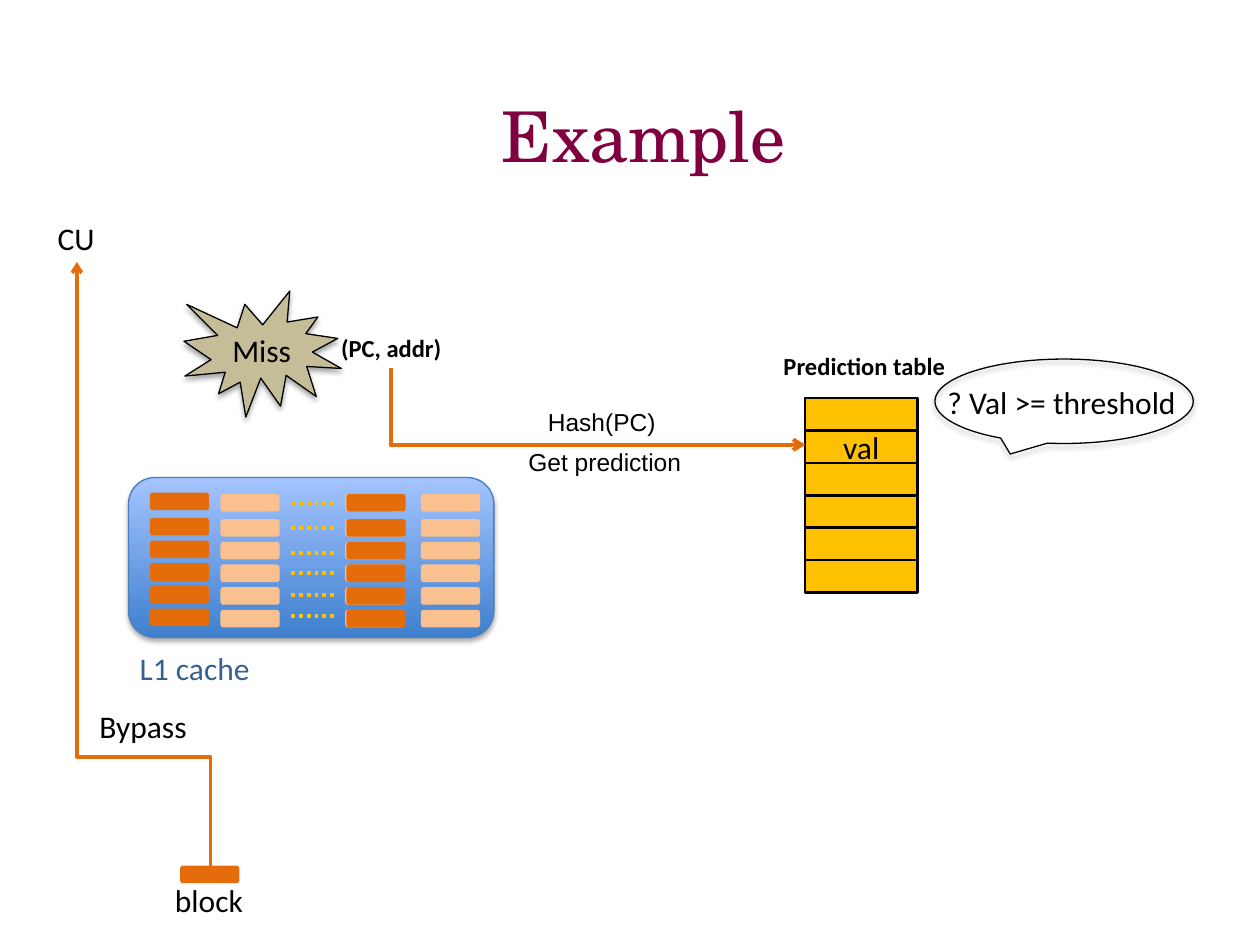
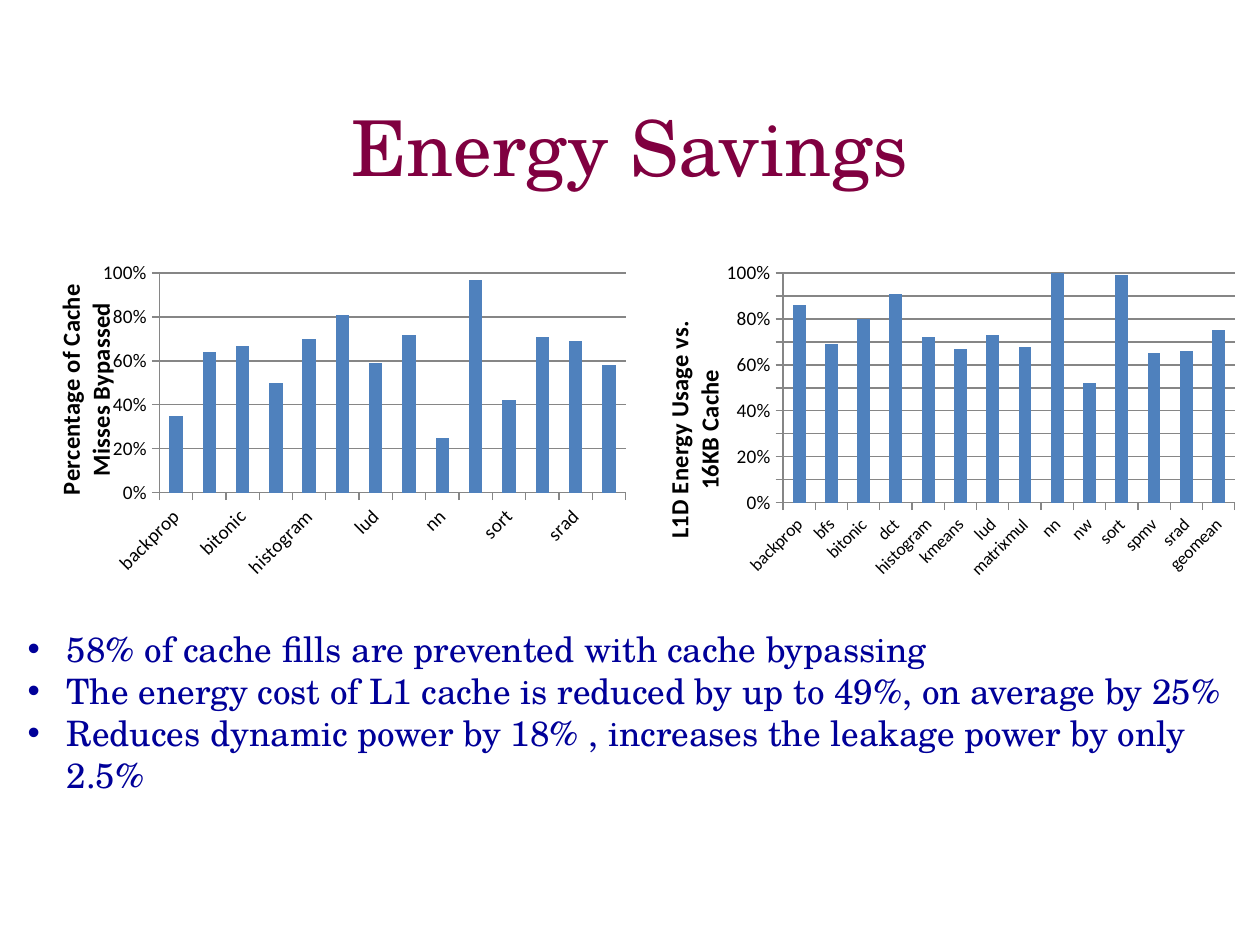
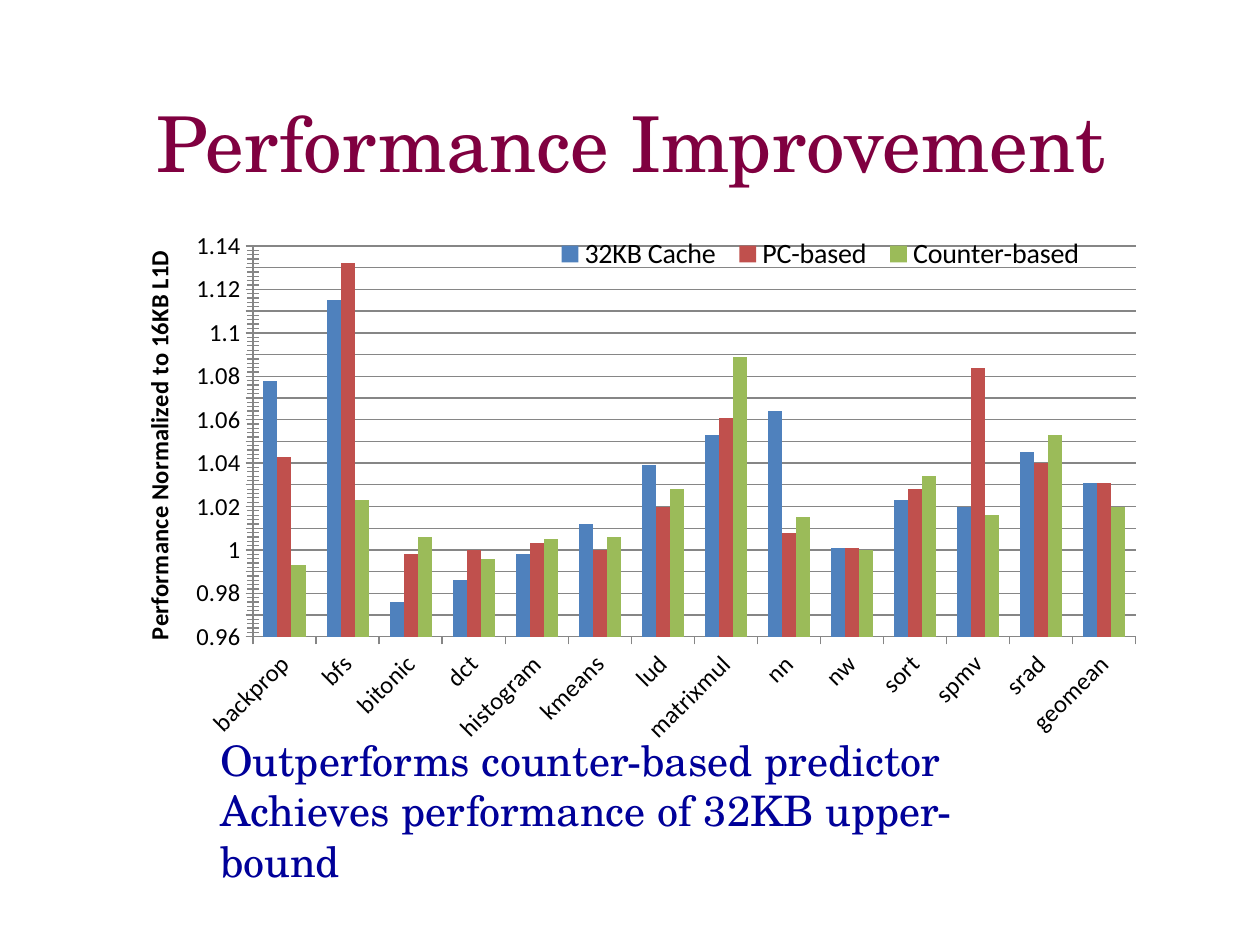
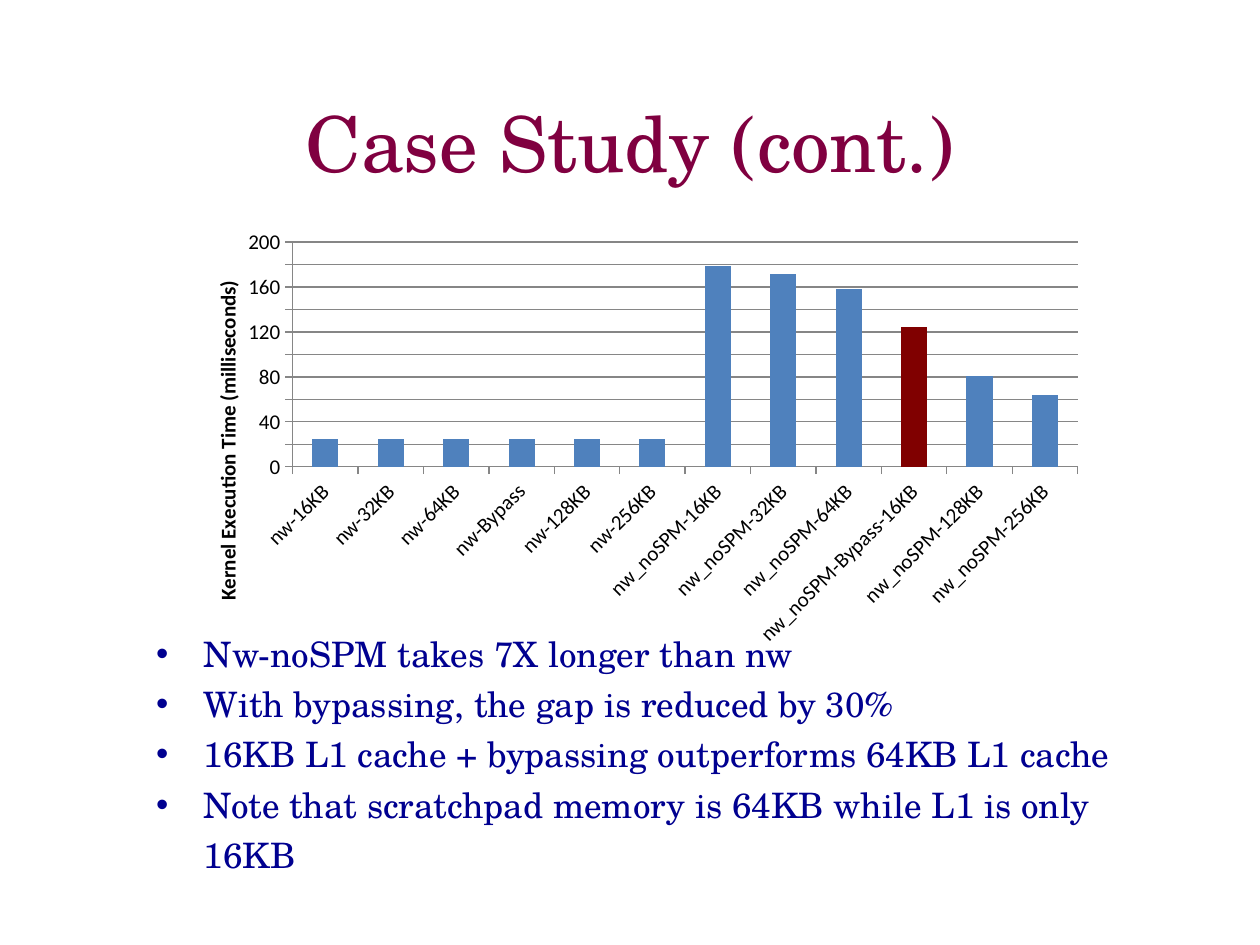
from dataclasses import dataclass

from lxml.etree import SubElement
from pptx import Presentation
from pptx.chart.data import CategoryChartData
from pptx.dml.color import RGBColor
from pptx.enum.chart import XL_CHART_TYPE, XL_LEGEND_POSITION, XL_TICK_MARK
from pptx.enum.dml import MSO_LINE
from pptx.enum.shapes import MSO_CONNECTOR, MSO_SHAPE
from pptx.enum.text import MSO_ANCHOR, MSO_AUTO_SIZE, PP_ALIGN
from pptx.oxml.ns import qn
from pptx.util import Inches, Pt


@dataclass(frozen=True)
class Theme:
    """Colours, fonts and type sizes shared by all slides."""
    title: str = "800040"
    body: str = "000099"
    study_body: str = "000090"
    black: str = "000000"
    caption: str = "376092"
    orange: str = "E46C0A"
    peach: str = "FAC090"
    gold: str = "FFC000"
    khaki: str = "C4BD97"
    cache_dark: str = "3F80CE"
    cache_light: str = "A4C4FF"
    cache_edge: str = "4B7EBC"
    grid: str = "868686"
    highlight: str = "800000"
    series: tuple = ("4F81BD", "C0504D", "9BBB59")
    serif: str = "TeX Gyre Schola"
    sans: str = "Calibri"
    plain: str = "Arial"
    title_size: int = 44
    label_size: int = 18
    small_size: int = 14
    body_size: int = 20


T = Theme()
CELLS_PER_INCH = 10
BENCHMARKS = ("backprop", "bfs", "bitonic", "dct", "histogram", "kmeans", "lud",
              "matrixmul", "nn", "nw", "sort", "spmv", "srad", "geomean")


def cells(*lengths):
    """Convert lengths on the 100 by 75 slide grid to EMU."""
    return [Inches(n / CELLS_PER_INCH) for n in lengths]


def rgb(colour):
    """Turn a hex string into a colour."""
    return RGBColor.from_string(colour)


def style_font(font, size, colour=T.black, name=T.sans, bold=False):
    """Set the common font properties."""
    font.size, font.name, font.bold = Pt(size), name, bold
    font.color.rgb = rgb(colour)


def style_line(line, colour, width):
    """Give a line its colour and width."""
    line.color.rgb = rgb(colour)
    line.width = Pt(width)


def write(tf, lines, size=T.label_size, colour=T.black, name=T.sans, bold=False,
          align=PP_ALIGN.LEFT, indent=0, spacing=None):
    """Fill a text frame, one paragraph a line, bulleted if indented."""
    for i, line in enumerate(lines):
        p = tf.add_paragraph() if i else tf.paragraphs[0]
        p.alignment = align
        if spacing:
            p.line_spacing = spacing
        if indent:
            pPr = p._p.get_or_add_pPr()
            pPr.set("marL", str(Inches(indent)))
            pPr.set("indent", str(-Inches(indent)))
            SubElement(pPr, qn("a:buFont")).set("typeface", T.plain)
            SubElement(pPr, qn("a:buChar")).set("char", "•")
        r = p.add_run()
        r.text = line
        style_font(r.font, size, colour, name, bold)


def add_text(s, box, lines, wrap=True, **style):
    """Add a text box that grows with its text."""
    tf = s.shapes.add_textbox(*cells(*box)).text_frame
    tf.word_wrap = wrap
    tf.auto_size = MSO_AUTO_SIZE.SHAPE_TO_FIT_TEXT
    write(tf, lines, **style)


def add_title(s, text, left=5, top=5, size=T.title_size):
    """Add the slide title in a middle-anchored band."""
    tf = s.shapes.add_textbox(*cells(left, top, 90, 12.5)).text_frame
    tf.word_wrap = True
    tf.vertical_anchor = MSO_ANCHOR.MIDDLE
    write(tf, [text], size, T.title, T.serif, align=PP_ALIGN.CENTER)


def add_block(s, kind, box, fill=None, edge=None, width=0.75, text=None,
              wrap=True, shadow=False):
    """Add a preset shape with optional fill, edge, text and soft shadow."""
    sp = s.shapes.add_shape(kind, *cells(*box))
    sp.shadow.inherit = False
    if fill:
        sp.fill.solid()
        sp.fill.fore_color.rgb = rgb(fill)
    else:
        sp.fill.background()
    if edge:
        style_line(sp.line, edge, width)
    else:
        sp.line.fill.background()
    if shadow:
        effects = sp._element.spPr.find(qn("a:effectLst"))
        outer = SubElement(effects, qn("a:outerShdw"), blurRad=str(Pt(3.1)),
                           dist=str(Pt(1.8)), dir="5400000", rotWithShape="0")
        tint = SubElement(outer, qn("a:srgbClr"), val=T.black)
        SubElement(tint, qn("a:alpha"), val="35000")
    if text:
        tf = sp.text_frame
        tf.word_wrap = wrap
        tf.vertical_anchor = MSO_ANCHOR.MIDDLE
        write(tf, [text], align=PP_ALIGN.CENTER)
    return sp


def add_link(s, kind, start, end, colour, width):
    """Add a connector without a shadow."""
    link = s.shapes.add_connector(kind, *cells(*start, *end))
    style_line(link.line, colour, width)
    SubElement(link._element.spPr, qn("a:effectLst"))
    return link


def add_elbow_arrow(s, start, end, preset, flip, width, bend=None):
    """Add an arrow that leaves its start vertically, as a quarter-turned elbow."""
    mid_x, mid_y = (start[0] + end[0]) / 2, (start[1] + end[1]) / 2
    half_w, half_h = abs(end[1] - start[1]) / 2, abs(end[0] - start[0]) / 2
    link = add_link(s, MSO_CONNECTOR.ELBOW, (mid_x - half_w, mid_y - half_h),
                    (mid_x + half_w, mid_y + half_h), T.orange, width)
    spPr = link._element.spPr
    xfrm = spPr.find(qn("a:xfrm"))
    xfrm.set("rot", "16200000")
    xfrm.set(flip, "1")
    geom = spPr.find(qn("a:prstGeom"))
    geom.set("prst", preset)
    if bend:
        SubElement(geom.find(qn("a:avLst")), qn("a:gd"), name="adj1",
                   fmla=f"val {round(bend * 100000)}")
    SubElement(link.line._get_or_add_ln(), qn("a:tailEnd"), type="arrow")


def place(parent, index, inner=False, **shares):
    """Fix a chart part at shares of the chart's size."""
    layout = parent.find(qn("c:layout"))
    if layout is None:
        layout = SubElement(parent, qn("c:layout"))
        parent.insert(index, layout)
    manual = SubElement(layout, qn("c:manualLayout"))
    modes = {"layoutTarget": "inner"} if inner else {}
    modes.update(xMode="edge", yMode="edge", **shares)
    for tag, value in modes.items():
        SubElement(manual, qn(f"c:{tag}")).set("val", str(value))


def add_columns(s, box, categories, series, axis_title, plot, title_at, scale,
                sizes, number_format="General"):
    """Add a clustered column chart; sizes are category, value and title type."""
    data = CategoryChartData()
    data.categories = categories
    for name, values in series:
        data.add_series(name, values)
    chart = s.shapes.add_chart(XL_CHART_TYPE.COLUMN_CLUSTERED, *cells(*box), data).chart
    style_font(chart.font, T.label_size)
    chart.has_title = chart.has_legend = False
    columns = chart.plots[0]
    columns.gap_width = 150
    columns.vary_by_categories = False
    for ser, colour in zip(columns.series, T.series):
        ser.format.fill.solid()
        ser.format.fill.fore_color.rgb = rgb(colour)
    for axis, size in zip((chart.category_axis, chart.value_axis), sizes):
        axis.major_tick_mark = XL_TICK_MARK.OUTSIDE
        axis.minor_tick_mark = XL_TICK_MARK.NONE
        style_line(axis.format.line, T.grid, 0.75)
        style_font(axis.tick_labels.font, size)
    chart.category_axis._element.find(qn("c:txPr")).find(qn("a:bodyPr")).set("rot", "-2700000")
    axis = chart.value_axis
    axis.minimum_scale, axis.maximum_scale, axis.major_unit = scale
    axis.has_major_gridlines = True
    style_line(axis.major_gridlines.format.line, T.grid, 0.75)
    axis.tick_labels.number_format = number_format
    axis.tick_labels.number_format_is_linked = False
    tf = axis.axis_title.text_frame
    write(tf, [axis_title], sizes[2], bold=True, align=PP_ALIGN.CENTER)
    tf._txBody.find(qn("a:bodyPr")).set("rot", "-5400000")
    tf._txBody.find(qn("a:bodyPr")).set("vert", "horz")
    place(axis.axis_title._element, 1, **dict(zip("xy", title_at)))
    place(chart._chartSpace.chart.plotArea, 0, True, **dict(zip("xywh", plot)))
    return chart


def add_cache(s):
    """Draw the cache with its columns of blocks and dotted gaps."""
    cache = add_block(s, MSO_SHAPE.ROUNDED_RECTANGLE, (10.2, 37.9, 29, 12.7),
                      edge=T.cache_edge, shadow=True)
    cache.fill.gradient()
    cache.fill.gradient_angle = 90
    for stop, colour in zip(cache.fill.gradient_stops, (T.cache_dark, T.cache_light)):
        stop.color.rgb = rgb(colour)
    block_rows = (39.2, 41.2, 43, 44.8, 46.6, 48.4)
    block_columns = ((27.4, 0, T.peach), (17.5, 0, T.peach), (33.4, 0, T.peach),
                     (27.5, 0, T.orange), (11.9, -0.1, T.orange))
    for left, shift, colour in block_columns:
        for top in block_rows:
            add_cache_line(s, left, top + shift, colour)
    for row in (39.9, 41.9, 43.9, 45.5, 47.2, 48.9):
        dots = add_link(s, MSO_CONNECTOR.STRAIGHT, (23.1, row), (26.7, row), T.gold, 2.25)
        dots.line.dash_style = MSO_LINE.ROUND_DOT


def add_cache_line(s, left, top, colour):
    """Draw one block of cached data."""
    add_block(s, MSO_SHAPE.ROUNDED_RECTANGLE, (left, top, 4.7, 1.4), colour)


def add_prediction_table(s):
    """Draw the stack of prediction entries."""
    height = 2.57
    for row in range(6):
        add_block(s, MSO_SHAPE.RECTANGLE, (63.9, 31.6 + row * height, 8.9, height), T.gold,
                  T.black, 1.5, text="val" if row == 1 else None, wrap=False)


def example_slide(s):
    """Show a miss that is looked up and bypassed."""
    center = PP_ALIGN.CENTER
    add_title(s, "Example", 6.1, 4.4, 40)
    add_text(s, (10, 51, 10.9, 4), ["L1 cache"], False, colour=T.caption, align=center)
    add_prediction_table(s)
    add_text(s, (61.2, 27.4, 15, 3.4), ["Prediction table"], size=T.small_size, bold=True)
    add_text(s, (25.3, 25.9, 11.5, 3.4), ["(PC, addr)"], size=T.small_size, bold=True,
             align=center)
    add_elbow_arrow(s, (31, 29.2), (63.9, 35.3), "bentConnector2", "flipH", 2.25)
    add_text(s, (42.5, 31.8, 16, 3.4), ["Hash(PC)"], size=T.small_size, name=T.plain)
    add_cache(s)
    add_text(s, (40.9, 35, 14.2, 3.4), ["Get prediction"], False, size=T.small_size,
             name=T.plain, align=center)
    add_block(s, MSO_SHAPE.EXPLOSION1, (14.6, 23.1, 12.5, 10), T.khaki, T.black,
              text="Miss", shadow=True)
    add_block(s, MSO_SHAPE.OVAL_CALLOUT, (74.2, 28.5, 20.5, 6.7), edge=T.black, shadow=True)
    add_cache_line(s, 14.3, 68.7, T.orange)
    add_elbow_arrow(s, (16.7, 68.7), (6.1, 20.8), "bentConnector3", "flipV", 2, bend=0.18)
    for text, left, top, width in (("? Val >= threshold", 74.2, 29.9, 20.5),
                                   ("block", 12.9, 69.4, 7.5),
                                   ("CU", 3.6, 16.9, 5),
                                   ("Bypass", 6.9, 55.6, 9)):
        add_text(s, (left, top, width, 4), [text], False)


def energy_slide(s):
    """Compare bypassed misses and energy use."""
    add_title(s, "Energy Savings", top=5.3)
    bypassed = (0.35, 0.64, 0.67, 0.5, 0.7, 0.81, 0.59, 0.72, 0.25, 0.97, 0.42, 0.71, 0.69, 0.58)
    energy = (0.86, 0.69, 0.8, 0.91, 0.72, 0.67, 0.73, 0.68, 1, 0.52, 0.99, 0.65, 0.66, 0.75)
    add_columns(s, (2.9, 20.1, 48.7, 26.4), BENCHMARKS, [("Series 1", bypassed)],
                "Percentage of Cache Misses Bypassed", (0.2, 0.06, 0.76, 0.66),
                (0.02, 0.08), (0, 1, 0.2), (11, 11, 14), "0%")
    add_columns(s, (49.2, 20.1, 49.8, 26.4), BENCHMARKS, [("Series 1", energy)],
                "L1D Energy Usage vs. 16KB Cache", (0.26, 0.06, 0.72, 0.69),
                (0.06, 0.19), (0, 1, 0.1), (10, 11, 14), "0%")
    add_text(s, (1.2, 49.3, 96.9, 11.1), [
        "58% of cache fills are prevented with cache bypassing",
        "The energy cost of L1 cache is reduced by up to 49%, on average by 25%",
        "Reduces dynamic power by 18% , increases the leakage power by only 2.5%",
    ], size=T.body_size, colour=T.body, name=T.serif, indent=0.31)


def performance_slide(s):
    """Compare the speed of three cache designs."""
    add_title(s, "Performance Improvement", 5.1)
    series = [
        ("32KB Cache", (1.078, 1.115, 0.976, 0.986, 0.998, 1.012, 1.039, 1.053, 1.064, 1.001,
                        1.023, 1.02, 1.045, 1.031)),
        ("PC-based", (1.043, 1.132, 0.998, 1, 1.003, 1, 1.02, 1.061, 1.008, 1.001, 1.028,
                      1.084, 1.04, 1.031)),
        ("Counter-based", (0.993, 1.023, 1.006, 0.996, 1.005, 1.006, 1.028, 1.089, 1.015, 1,
                           1.034, 1.016, 1.053, 1.02)),
    ]
    chart = add_columns(s, (8.4, 17.4, 83.4, 42.5), BENCHMARKS, series,
                        "Performance Normalized to 16KB L1D", (0.14, 0.05, 0.84, 0.73),
                        (0.03, 0.05), (0.96, 1.14, 0.01), (14, 14, 14))
    chart.value_axis.minor_tick_mark = XL_TICK_MARK.CROSS
    chart.value_axis.minor_unit = 0.002
    chart.has_legend = True
    chart.legend.position = XL_LEGEND_POSITION.RIGHT
    chart.legend.include_in_layout = True
    style_font(chart.legend.font, 16)
    place(chart.legend._element, 1, x=0.42, y=0.03, w=0.52, h=0.07)
    add_text(s, (16.5, 57.8, 68.2, 9.1), [
        "Outperforms counter-based predictor",
        "Achieves performance of 32KB upper-bound",
    ], size=24, colour=T.body, name=T.serif)


def case_study_slide(s):
    """Show kernel times with the bypass case highlighted."""
    add_title(s, "Case Study (cont.)")
    variants = ("16KB", "32KB", "64KB", "Bypass", "128KB", "256KB")
    names = [f"nw-{v}" for v in variants]
    names += [f"nw_noSPM-{v}".replace("Bypass", "Bypass-16KB") for v in variants]
    times = [25] * 6 + [179, 172, 158, 124, 81, 64]
    chart = add_columns(s, (13.7, 17.5, 73.3, 34.3), names, [("Series 1", times)],
                        "Kernel Execution Time (milliseconds)", (0.13, 0.05, 0.85, 0.52),
                        (0.04, 0.13), (0, 200, 20), (12, 12, 12))
    bypass = chart.plots[0].series[0].points[9].format.fill
    bypass.solid()
    bypass.fore_color.rgb = rgb(T.highlight)
    add_text(s, (11.4, 49, 81.1, 17.1), [
        "Nw-noSPM takes 7X longer than nw",
        "With bypassing, the gap is reduced by 30%",
        "16KB L1 cache + bypassing outperforms 64KB L1 cache",
        "Note that scratchpad memory is 64KB while L1 is only 16KB",
    ], size=T.body_size, colour=T.study_body, name=T.serif, indent=0.38, spacing=1.2)


def main():
    """Build the four slides and save them."""
    prs = Presentation()
    prs.slide_width, prs.slide_height = cells(100, 75)
    for fill_slide in (example_slide, energy_slide, performance_slide, case_study_slide):
        fill_slide(prs.slides.add_slide(prs.slide_layouts[6]))
    prs.save("out.pptx")


if __name__ == "__main__":
    main()
